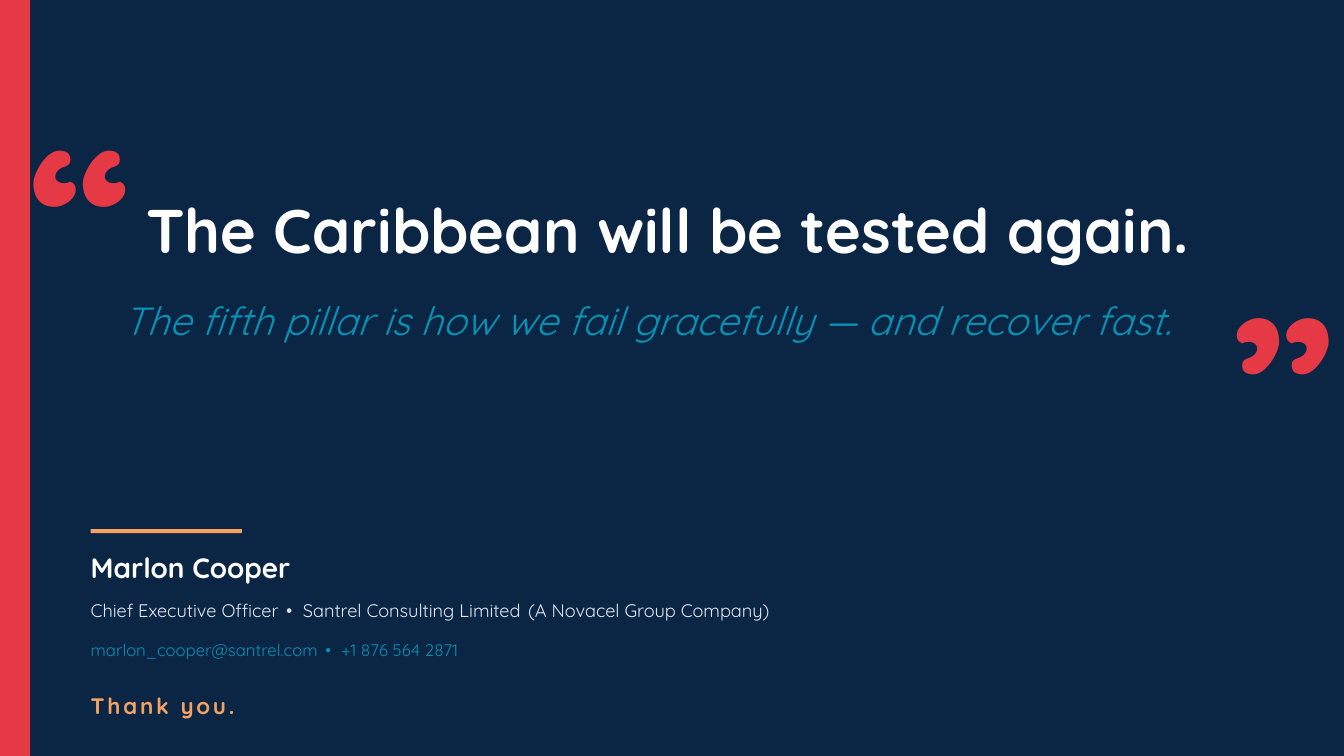
from collections import namedtuple
from dataclasses import dataclass

from pptx import Presentation
from pptx import util as u
from pptx.dml import color
from pptx.enum import shapes, text

Box = namedtuple("Box", "left top width height")
Style = namedtuple("Style", "size color bold italic", defaults=(False, False))


@dataclass(frozen=True)
class Theme:
    """Colours, type styles and letter spacing of the slide."""

    font: str = "Quicksand"
    navy: str = "0B2545"
    red: str = "E63946"
    orange: str = "F4A261"
    mark: Style = Style(160, "E63946", bold=True)
    title: Style = Style(44, "FFFFFF", bold=True)
    subtitle: Style = Style(28, "0891B2", italic=True)
    name: Style = Style(20, "FFFFFF", bold=True)
    role: Style = Style(13, "E2E8F0")
    contact: Style = Style(12, "0891B2")
    thanks: Style = Style(16, "F4A261", bold=True)
    tracking: int = 200


THEME = Theme()


def inside(box, left, top, width, height):
    """Return a box whose corner is offset from the corner of another box."""
    return Box(box.left + left, box.top + top, width, height)


def place(item, box):
    """Move and size an item to a box given in points."""
    item.left, item.top, item.width, item.height = map(u.Pt, box)


def write(item, spans, style):
    """Write one paragraph of (wording, tracked) spans in one style."""
    frame = item.text_frame
    frame.word_wrap = True
    frame.auto_size = text.MSO_AUTO_SIZE.NONE
    frame.vertical_anchor = text.MSO_ANCHOR.MIDDLE
    frame.margin_left = frame.margin_right = 0
    frame.margin_top = frame.margin_bottom = 0
    para = frame.paragraphs[0]
    para.alignment = text.PP_ALIGN.LEFT
    para.space_before = u.Pt(0)
    for wording, tracked in spans:
        span = para.add_run()
        span.text = wording
        if tracked:
            span.font._element.set("spc", str(THEME.tracking))
    font = para.font
    font.name, font.size = THEME.font, u.Pt(style.size)
    font.bold, font.italic = style.bold, style.italic
    font.color.rgb = color.RGBColor.from_string(style.color)


def add_text(page, box, spans, style):
    """Add a text box holding one styled paragraph."""
    item = page.shapes.add_textbox(*map(u.Pt, box))
    write(item, spans, style)
    return item


def add_bar(page, box, fill):
    """Add a plain filled rectangle."""
    bar = page.shapes.add_shape(shapes.MSO_SHAPE.RECTANGLE, *map(u.Pt, box))
    bar.shadow.inherit = False
    bar.fill.solid()
    bar.fill.fore_color.rgb = color.RGBColor.from_string(fill)
    bar.line.fill.background()


def add_quotation(page, box):
    """Place the title, the subtitle and the two quotation marks."""
    title, subtitle = page.shapes.title, page.placeholders[1]
    place(title, inside(box, 82.8, 36.7, 850, 86.4))
    write(title, [("The Caribbean will be tested again.", False)], THEME.title)
    place(subtitle, inside(box, 66.2, 108.7, 860, 72))
    words = "The fifth pillar is how we fail gracefully — and recover fast."
    write(subtitle, [(words, False)], THEME.subtitle)
    add_text(page, inside(box, 0, 0, 108, 144), [("“", False)], THEME.mark)
    closing = add_text(page, inside(box, 822.2, 93.6, 108, 86.4), [("“", False)], THEME.mark)
    closing.rotation = 180


def add_signature(page, box):
    """Place the accent rule, the speaker's details and the thanks."""
    add_bar(page, inside(box, 0, 0, 108, 2.88), THEME.orange)
    dot = (" • ", True)
    role = [("Chief Executive Officer", False), dot, ("Santrel Consulting Limited", False),
            (" ", True), ("(A Novacel Group Company)", False)]
    contact = [("marlon_cooper@santrel.com", False), dot, ("+1 876 564 2871", False)]
    lines = [
        (10.8, 32.4, [("Marlon Cooper", False)], THEME.name),
        (43.2, 28.8, role, THEME.role),
        (72, 28.8, contact, THEME.contact),
        (108, 36, [("Thank you.", True)], THEME.thanks),
    ]
    for top, height, spans, style in lines:
        add_text(page, inside(box, 0, top, box.width, height), spans, style)


def add_closing_slide(deck, box):
    """Build the closing slide within the given box."""
    page = deck.slides.add_slide(deck.slide_layouts[0])
    page.background.fill.solid()
    page.background.fill.fore_color.rgb = color.RGBColor.from_string(THEME.navy)
    edge = 21.6
    add_bar(page, inside(box, 0, 0, edge, box.height), THEME.red)
    add_quotation(page, inside(box, edge, 83.5, box.width - edge, 180))
    add_signature(page, inside(box, 64.8, 378, 720, 144))


def main():
    """Create the deck and save it."""
    deck = Presentation()
    deck.slide_width, deck.slide_height = u.Pt(960), u.Pt(540)
    add_closing_slide(deck, Box(0, 0, 960, 540))
    deck.save("out.pptx")


if __name__ == "__main__":
    main()
